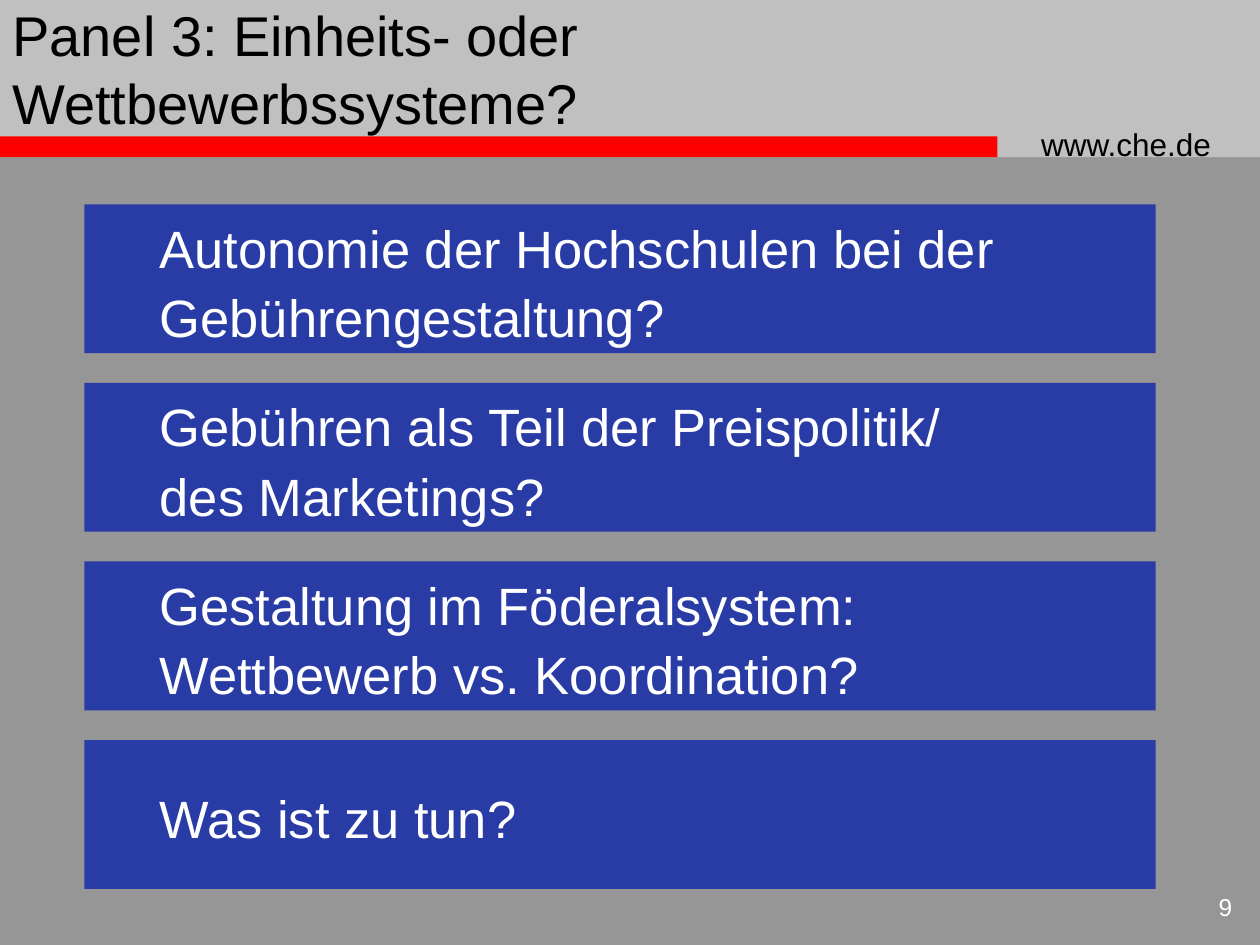
from pptx import Presentation
from pptx.dml.color import RGBColor
from pptx.enum.shapes import MSO_SHAPE as Shape
from pptx.enum.text import MSO_ANCHOR as Anchor, PP_ALIGN as Align
from pptx.util import Cm, Pt

COLORS = {
    "background": "969696",
    "header": "C0C0C0",
    "accent": "FF0000",
    "block": "293BA5",
    "dark": "000000",
    "light": "FFFFFF",
}
QUESTIONS = [
    ["Autonomie der Hochschulen bei der", "Gebührengestaltung?"],
    ["Gebühren als Teil der Preispolitik/", "des Marketings?"],
    ["Gestaltung im Föderalsystem:", "Wettbewerb vs. Koordination?"],
    ["Was ist zu tun?"],
]


def color(name):
    return RGBColor.from_string(COLORS[name])


def write(tf, lines, size, font, ink="dark", align=Align.LEFT,
          anchor=Anchor.TOP, indent=0, spacing=None):
    """Fill a text frame with one paragraph per line."""
    tf.word_wrap = True
    tf.vertical_anchor = anchor
    for i, line in enumerate(lines):
        p = tf.paragraphs[0] if i == 0 else tf.add_paragraph()
        p.alignment = align
        if spacing:
            p.line_spacing = spacing
        if indent:
            p.level = 1
            pPr = p._p.get_or_add_pPr()
            pPr.set("marL", str(Cm(indent)))
            pPr.set("indent", "0")
        r = p.add_run()
        r.text = line
        r.font.name = font
        r.font.size = Pt(size)
        r.font.color.rgb = color(ink)


class Deck:
    font = "Arial"

    def __init__(self, width, height):
        self.prs = Presentation()
        self.prs.slide_width, self.prs.slide_height = Cm(width), Cm(height)

    def add_slide(self):
        self.s = self.prs.slides.add_slide(self.prs.slide_layouts[6])
        fill = self.s.background.fill
        fill.solid()
        fill.fore_color.rgb = color("background")

    def bar(self, left, top, width, height, fill):
        sp = self.s.shapes.add_shape(
            Shape.RECTANGLE, Cm(left), Cm(top), Cm(width), Cm(height))
        sp.shadow.inherit = False
        sp.fill.solid()
        sp.fill.fore_color.rgb = color(fill)
        sp.line.fill.background()
        return sp

    def text(self, left, top, width, height, line, size, **style):
        box = self.s.shapes.add_textbox(
            Cm(left), Cm(top), Cm(width), Cm(height))
        write(box.text_frame, [line], size, self.font, **style)

    def block(self, left, top, width, height, lines):
        sp = self.bar(left, top, width, height, "block")
        write(sp.text_frame, lines, 30, self.font, ink="light",
              anchor=Anchor.MIDDLE, indent=1.27, spacing=1.1)


def main():
    deck = Deck(25.4, 19.05)
    deck.add_slide()

    # Header band, red rule and web address
    deck.bar(0, 0, 25.4, 3.17, "header")
    deck.bar(0, 2.75, 20.11, 0.42, "accent")
    deck.text(20.74, 2.39, 4.45, 1.02, "www.che.de", 18)

    # Title
    deck.text(0, 0, 20.52, 2.75, "Panel 3: Einheits- oder Wettbewerbssysteme?",
              32, anchor=Anchor.MIDDLE)

    # Question blocks, evenly stacked
    for i, lines in enumerate(QUESTIONS):
        deck.block(1.7, 4.12 + 3.6 * i, 21.6, 3, lines)

    # Slide number
    deck.text(23.62, 17.86, 1.47, 1.07, "9", 14, ink="light",
              align=Align.RIGHT)

    deck.prs.save("out.pptx")


if __name__ == "__main__":
    main()
